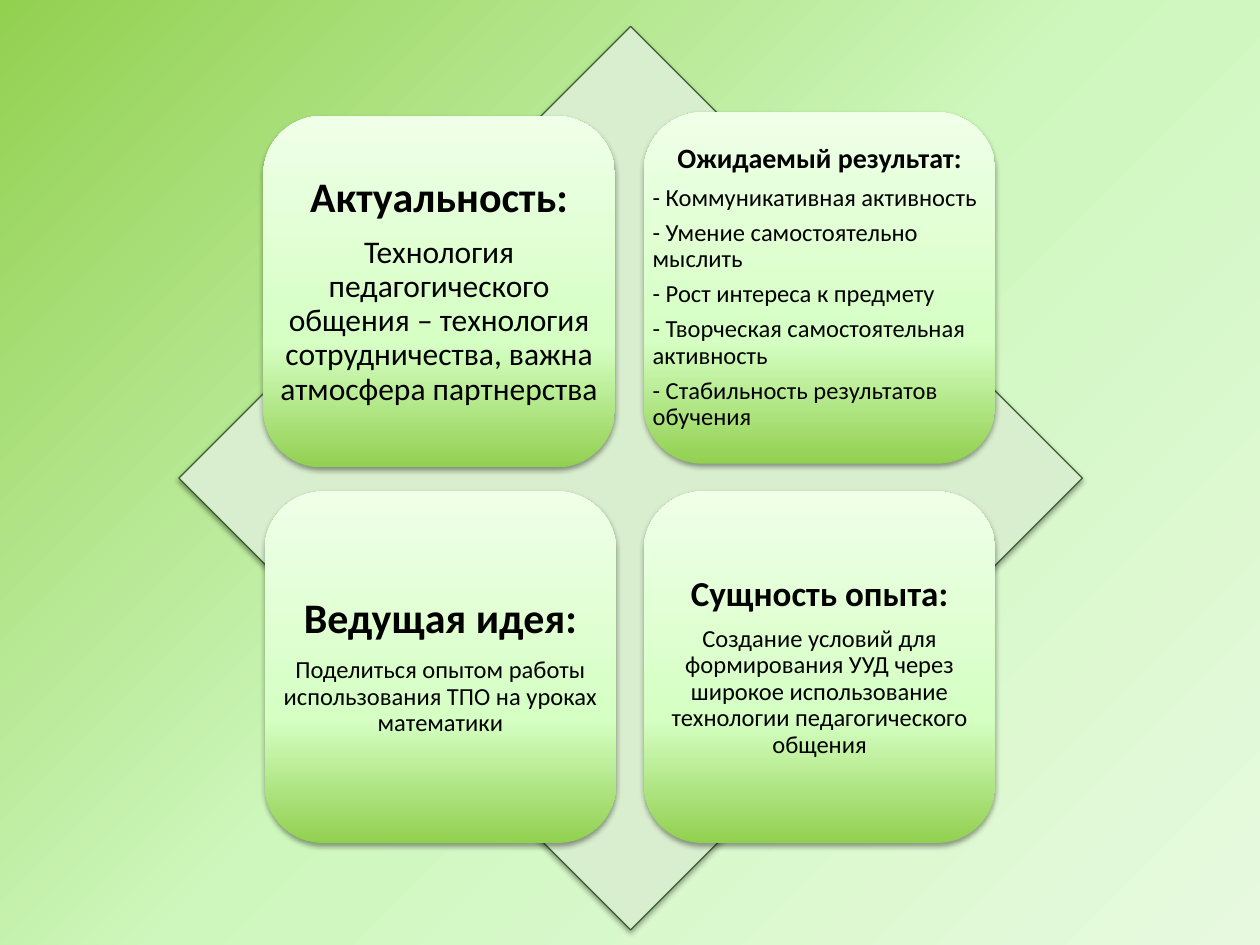
import pptx
import pptx.util
import pptx.dml.color
import pptx.enum.shapes
import pptx.enum.text
import pptx.oxml
import pptx.oxml.ns
from pptx.util import Inches

SHAPE = pptx.enum.shapes.MSO_SHAPE
ALIGN = pptx.enum.text.PP_ALIGN
SIDE = 2.79
BACK = [(0, "92D050"), (50, "CEF7BD"), (100, "E7FADF")]
CARD = [(0, "92D050"), (35, "D5FFC3"), (100, "EFFFE8")]

# left, top, inset, heading size, body size, body alignment, heading, body
CARDS = [
    (2.09, 0.92, 0.1, 24, 18, ALIGN.CENTER, "Актуальность:",
     ["Технология педагогического общения – технология сотрудничества, "
      "важна атмосфера партнерства"]),
    (5.11, 0.89, 0.07, 16, 14, ALIGN.LEFT, "Ожидаемый результат:",
     ["- Коммуникативная активность",
      "- Умение самостоятельно мыслить",
      "- Рост интереса к предмету",
      "- Творческая самостоятельная активность",
      "- Стабильность результатов обучения"]),
    (2.1, 3.9, 0.1, 24, 14, ALIGN.CENTER, "Ведущая идея:",
     ["Поделиться опытом работы использования ТПО на уроках математики"]),
    (5.11, 3.9, 0.08, 20, 14, ALIGN.CENTER, "Сущность опыта:",
     ["Создание условий для формирования УУД через широкое использование "
      "технологии педагогического общения"]),
]


def color(code):
    return pptx.dml.color.RGBColor.from_string(code)


def node(parent, tag, **attrs):
    """Append a DrawingML child with the given attributes."""
    child = pptx.oxml.parse_xml(f"<a:{tag} {pptx.oxml.ns.nsdecls('a')}/>")
    for name, value in attrs.items():
        child.set(name, str(value))
    parent.append(child)
    return child


def blend(fill, root, stops, angle):
    """Give a fill a gradient; root is the element that holds it."""
    fill.gradient()
    fill.gradient_angle = 360 - angle
    stop_list = root.find(".//" + pptx.oxml.ns.qn("a:gsLst"))
    for old in list(stop_list):
        stop_list.remove(old)
    for place, code in stops:
        stop = node(stop_list, "gs", pos=place * 1000)
        node(stop, "srgbClr", val=code)


def shade(shape):
    """Cast a soft shadow straight down."""
    shape.shadow.inherit = False
    effects = shape.element.spPr.find(pptx.oxml.ns.qn("a:effectLst"))
    outer = node(effects, "outerShdw", blurRad=pptx.util.Pt(3.1),
                 dist=pptx.util.Pt(1.6), dir=90 * 60000, rotWithShape=0)
    node(node(outer, "srgbClr", val="000000"), "alpha", val=38000)


def add_diamond(slide):
    shape = slide.shapes.add_shape(SHAPE.DIAMOND, Inches(1.42), Inches(0.21),
                                   Inches(7.17), Inches(7.17))
    shape.fill.solid()
    shape.fill.fore_color.rgb = color("D8EECE")
    shape.line.color.rgb = color("38602E")
    shape.line.width = pptx.util.Pt(0.75)
    shade(shape)


def add_card(slide, left, top):
    shape = slide.shapes.add_shape(SHAPE.ROUNDED_RECTANGLE, Inches(left),
                                   Inches(top), Inches(SIDE), Inches(SIDE))
    blend(shape.fill, shape.element.spPr, CARD, 270)
    shape.line.fill.background()
    shade(shape)


def style(para, size, bold, align):
    para.alignment = align
    para.line_spacing = 0.9
    after = node(para._p.get_or_add_pPr(), "spcAft")
    node(after, "spcPct", val=35000)
    for run in para.runs:
        run.font.name = "Calibri"
        run.font.size = pptx.util.Pt(size)
        run.font.bold = bold
        run.font.color.rgb = color("000000")


def add_text(slide, left, top, inset, head_size, body_size, align, head, body):
    box = slide.shapes.add_textbox(Inches(left), Inches(top),
                                   Inches(SIDE), Inches(SIDE))
    frame = box.text_frame
    frame.word_wrap = True
    frame.vertical_anchor = pptx.enum.text.MSO_ANCHOR.MIDDLE
    frame.margin_left = frame.margin_right = Inches(inset)
    frame.margin_top = frame.margin_bottom = Inches(inset)
    frame.text = "\n".join([head] + body)
    first, *rest = frame.paragraphs
    style(first, head_size, True, ALIGN.CENTER)
    for para in rest:
        style(para, body_size, False, align)


def main():
    deck = pptx.Presentation()
    deck.slide_width, deck.slide_height = Inches(10), Inches(7.5)
    slide = deck.slides.add_slide(deck.slide_layouts[6])
    blend(slide.background.fill, slide.element, BACK, 45)
    add_diamond(slide)
    for left, top, *words in CARDS:
        add_card(slide, left, top)
        add_text(slide, left, top, *words)
    deck.save("out.pptx")


if __name__ == "__main__":
    main()
